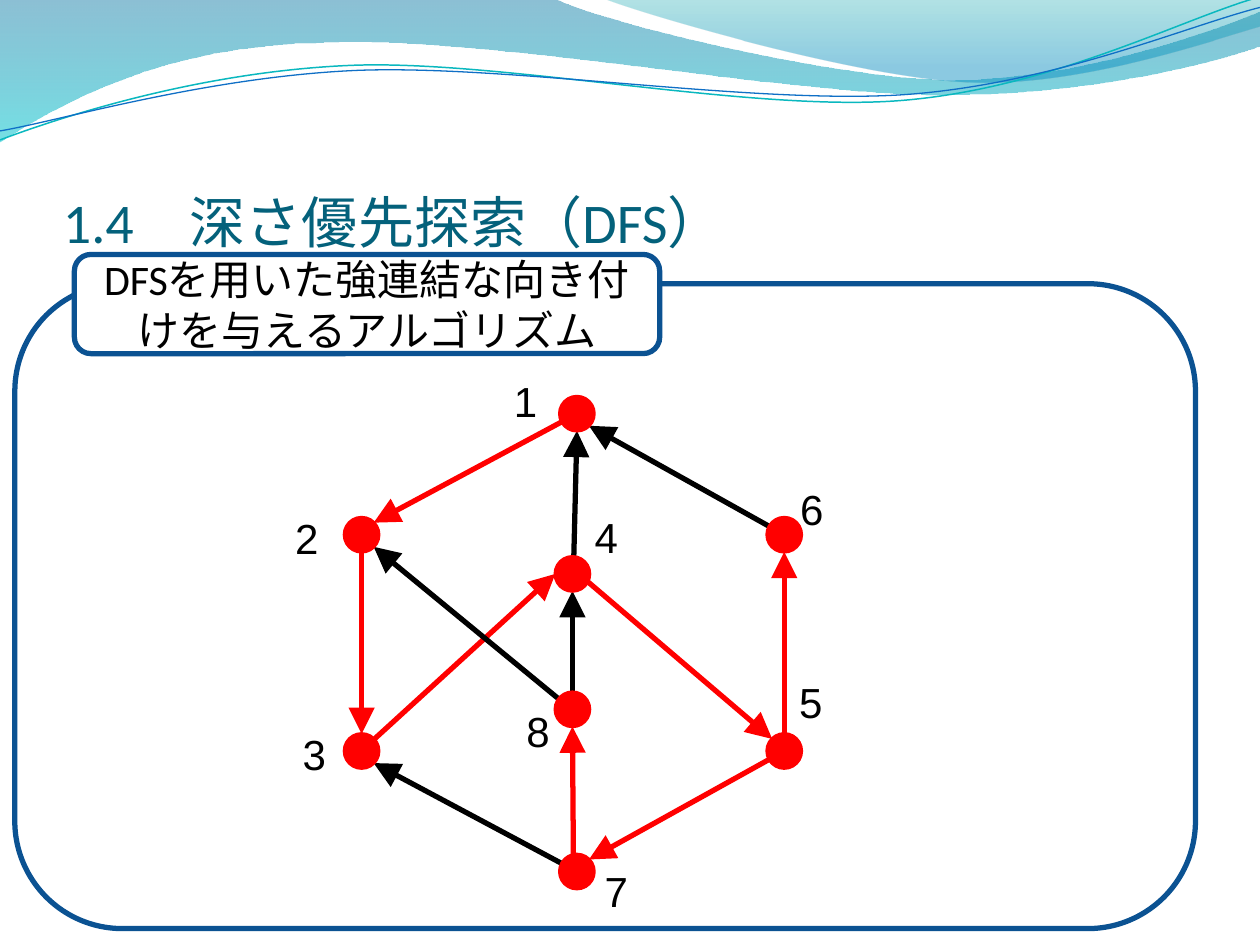
import math
from lxml import etree
from pptx import Presentation
from pptx import util as u
from pptx.dml.color import RGBColor
from pptx.enum import shapes, text
from pptx.oxml import ns

WHITE = RGBColor(0xFF, 0xFF, 0xFF)
BLACK = RGBColor(0, 0, 0)
RED = RGBColor(0xFF, 0, 0)
NAVY = RGBColor(0x0B, 0x52, 0x92)
TITLE = RGBColor(0x04, 0x61, 0x7B)
TEAL = RGBColor(0x0A, 0xB8, 0xBF)
BLUE = RGBColor(0x0F, 0x6F, 0xC6)
DEEP = RGBColor(0x00, 0x74, 0xA1)
AQUA = RGBColor(0x00, 0xC6, 0xCF)
SEA = RGBColor(0x00, 0xA1, 0xA9)
SKY = RGBColor(0x00, 0x8B, 0xBF)

BANDS = [
    ([(0, -0.03), (11.18, -0.03),
      (12.09, 0.43, 16.87, 1.6, 19.25, 1.6),
      (21.67, 1.6, 24.33, 0.66, 25.4, 0.23), (25.43, 0.91),
      (24.97, 1.12, 22.1, 1.93, 18.95, 1.91),
      (15.8, 1.91, 9.7, 0.71, 6.53, 0.86),
      (3.28, 0.89, 1.17, 2.11, -0.03, 2.87)],
     [(0, DEEP, 45), (1, AQUA, 55)]),
    ([(12.17, -0.03), (12.93, 0.28, 17.32, 1.57, 19.53, 1.65),
      (21.74, 1.75, 24.41, 0.81, 25.4, 0.53), (25.4, 0)],
     [(0, SEA, 30), (0.8, SKY, 45)]),
]
WAVE_TILT = -2.7
WAVES = [
    ([(0, 2.82), (1.22, 2.36, 4.01, 1.45, 7.04, 1.32),
      (10.03, 1.19, 15.06, 2.26, 18.11, 2.03),
      (21.16, 1.8, 23.83, 0.38, 25.35, -0.05)], (12.68, 1.46), TEAL, 0.85),
    ([(0, 2.64), (1.19, 2.44, 4.17, 1.55, 7.19, 1.42),
      (10.24, 1.3, 15.16, 2.11, 18.21, 1.91),
      (21.23, 1.7, 23.9, 0.53, 25.4, 0.15)], (12.69, 1.5), BLUE, 0.75),
]

DIAMETER = 0.69
NODES = {
    1: (11.63, 8.34), 2: (7.29, 10.78), 3: (7.29, 15.14), 4: (11.54, 11.57),
    5: (15.81, 15.14), 6: (15.81, 10.78), 7: (11.63, 17.57), 8: (11.54, 14.3),
}
LABELS = {
    1: (10.11, 7.44), 2: (5.7, 10.21), 3: (5.85, 14.56), 4: (11.74, 10.19),
    5: (15.86, 13.51), 6: (15.88, 9.63), 7: (11.94, 17.32), 8: (10.36, 14.1),
}
ANGLES = {"right": 0, "bottom right": 45, "bottom": 90, "left": 180,
          "top left": 225, "top": 270, "top right": 315}
TREE_EDGES = [(1, 2, "top right"), (2, 3, "top"), (3, 4, "left"),
              (4, 5, "top left"), (5, 6, "bottom"), (5, 7, "top right"),
              (7, 8, "bottom")]
BACK_EDGES = [(6, 1, "bottom right"), (4, 1, "bottom"), (8, 4, "bottom"),
              (8, 2, "bottom right"), (7, 3, "bottom right")]
STARTS = {(7, 8): (11.56, 17.4), (8, 2): (11.3, 14.12), (3, 4): (7.37, 15.06),
          (4, 5): (11.56, 11.48), (4, 1): (11.56, 11.51)}

prs = Presentation()
prs.slide_width, prs.slide_height = u.Cm(25.4), u.Cm(19.05)
s = prs.slides.add_slide(prs.slide_layouts[6])


def add_xml(parent, tag, **attrs):
    return etree.SubElement(parent, ns.qn(tag), attrs)


def write(sp, words, size=24, font="Calibri", color=BLACK, align=None,
          anchor=text.MSO_ANCHOR.TOP, wrap=True):
    tf = sp.text_frame
    tf.word_wrap = wrap
    tf.vertical_anchor = anchor
    p = tf.paragraphs[0]
    p.alignment = align
    r = p.add_run()
    r.text = words
    r.font.size, r.font.name = u.Pt(size), font
    r.font.color.rgb = color
    return tf


def add_textbox(x, y, w, h, words, **style):
    sp = s.shapes.add_textbox(u.Cm(x), u.Cm(y), u.Cm(w), u.Cm(h))
    return write(sp, words, **style)


def add_shape(kind, x, y, w, h, line, width, fill=None):
    sp = s.shapes.add_shape(kind, u.Cm(x), u.Cm(y), u.Cm(w), u.Cm(h))
    sp.shadow.inherit = False
    if fill is None:
        sp.fill.background()
    else:
        sp.fill.solid()
        sp.fill.fore_color.rgb = fill
    sp.line.color.rgb, sp.line.width = line, u.Pt(width)
    return sp


def pairs(step):
    return list(zip(step[::2], step[1::2]))


def turn(step, center, degrees):
    cos, sin = math.cos(math.radians(degrees)), math.sin(math.radians(degrees))
    cx, cy = center
    return [v for x, y in pairs(step)
            for v in (cx + (x - cx) * cos - (y - cy) * sin,
                      cy + (x - cx) * sin + (y - cy) * cos)]


def add_curve(steps, close):
    ends = [(u.Cm(step[-2]), u.Cm(step[-1])) for step in steps]
    builder = s.shapes.build_freeform(*ends[0])
    builder.add_line_segments(ends[1:], close=close)
    sp = builder.convert_to_shape()
    sp.shadow.inherit = False
    segments = list(sp._element.spPr.iter(ns.qn("a:lnTo")))
    for segment, step in zip(segments, steps[1:]):
        if len(step) == 6:
            curve = etree.Element(ns.qn("a:cubicBezTo"))
            for x, y in pairs(step):
                add_xml(curve, "a:pt", x=str(u.Cm(x) - sp.left),
                        y=str(u.Cm(y) - sp.top))
            segment.getparent().replace(segment, curve)
    return sp


def add_edge(start, end, side, color):
    x1, y1 = STARTS.get((start, end), NODES[start])
    x2, y2 = NODES[end]
    angle = math.radians(ANGLES[side])
    x2 += DIAMETER / 2 * math.cos(angle)
    y2 += DIAMETER / 2 * math.sin(angle)
    edge = s.shapes.add_connector(shapes.MSO_CONNECTOR.STRAIGHT,
                                  u.Cm(x1), u.Cm(y1), u.Cm(x2), u.Cm(y2))
    edge.line.color.rgb, edge.line.width = color, u.Pt(3)
    add_xml(edge.line._get_or_add_ln(), "a:tailEnd",
            type="triangle", w="lg", len="lg")
    add_xml(edge._element.spPr, "a:effectLst")


for steps, stops in BANDS:
    sp = add_curve(steps, True)
    sp.line.fill.background()
    sp.fill.gradient()
    sp.fill.gradient_angle = 270
    for stop, (position, color, _) in zip(sp.fill.gradient_stops, stops):
        stop.position, stop.color.rgb = position, color
    colors = sp._element.spPr.iter(ns.qn("a:srgbClr"))
    for clr, (_, _, opacity) in zip(list(colors), stops):
        add_xml(clr, "a:alpha", val=str(opacity * 1000))

for steps, center, color, width in WAVES:
    sp = add_curve([turn(step, center, -WAVE_TILT) for step in steps], False)
    sp.rotation = WAVE_TILT
    sp.fill.background()
    sp.line.color.rgb, sp.line.width = color, u.Pt(width)

tf = add_textbox(1.27, 1.96, 22.86, 3.17, "1.4　深さ優先探索（DFS）",
                 size=32, color=TITLE, anchor=text.MSO_ANCHOR.BOTTOM)
tf.margin_left = tf.margin_right = tf.margin_bottom = 0

ROUNDED = shapes.MSO_SHAPE.ROUNDED_RECTANGLE
add_shape(ROUNDED, 0.3, 5.72, 23.8, 13, NAVY, 3)
heading = add_shape(ROUNDED, 1.5, 5.13, 11.8, 2, NAVY, 3, WHITE)
write(heading, "DFSを用いた強連結な向き付けを与えるアルゴリズム",
      align=text.PP_ALIGN.CENTER, anchor=text.MSO_ANCHOR.MIDDLE)

for edges, color in ((TREE_EDGES, RED), (BACK_EDGES, BLACK)):
    for edge in edges:
        add_edge(*edge, color)

for x, y in NODES.values():
    add_shape(shapes.MSO_SHAPE.OVAL, x - DIAMETER / 2, y - DIAMETER / 2,
              DIAMETER, DIAMETER, RED, 2, RED)

for number, (x, y) in LABELS.items():
    add_textbox(x, y, 1, 1.3, str(number), font="Arial", wrap=False)

prs.save("out.pptx")
